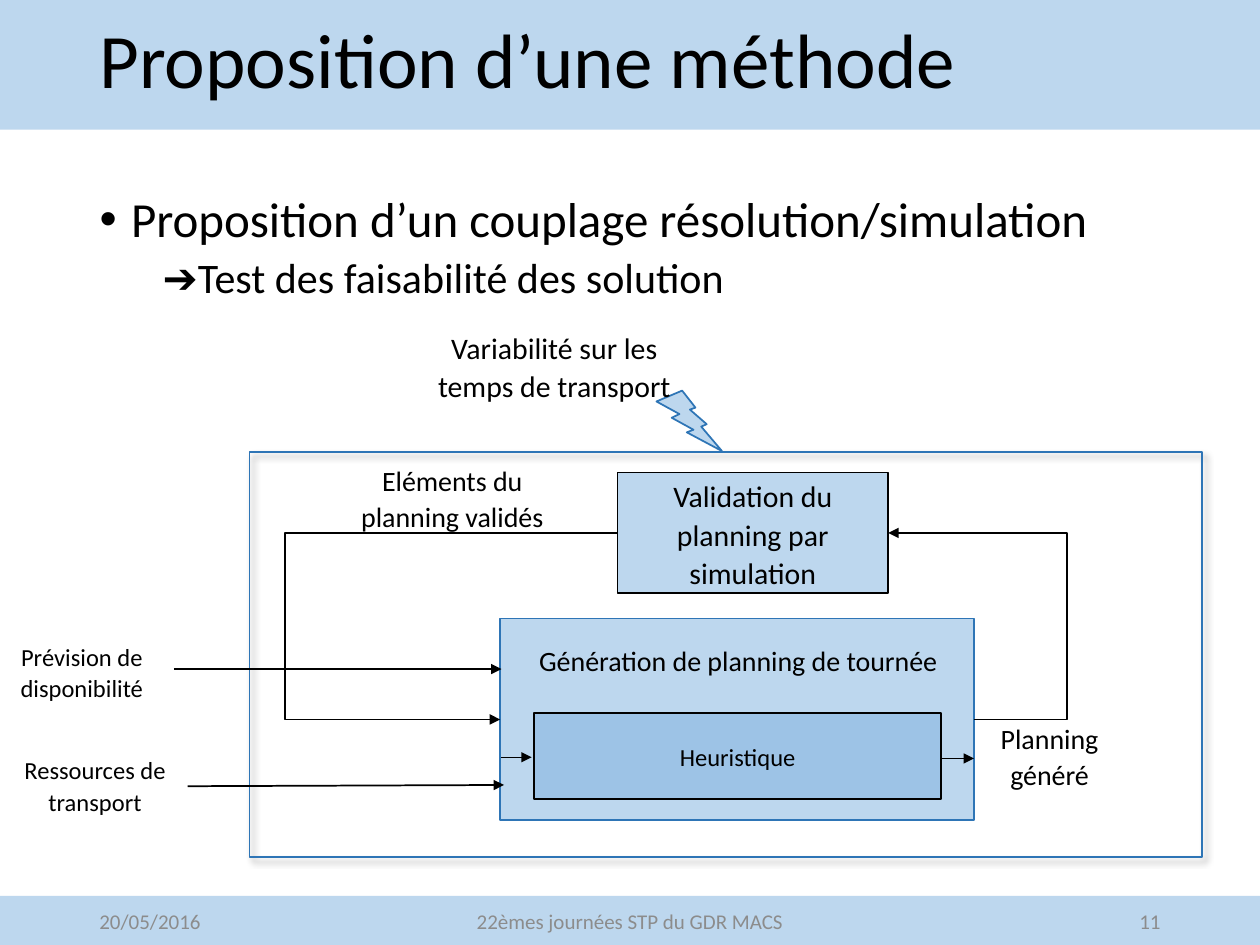
from lxml import etree
from pptx import Presentation
from pptx.dml.color import RGBColor
from pptx.enum.shapes import MSO_CONNECTOR, MSO_SHAPE
from pptx.enum.text import MSO_ANCHOR, MSO_AUTO_SIZE, PP_ALIGN
from pptx.oxml import parse_xml
from pptx.oxml.ns import nsdecls, qn
from pptx.util import Inches, Pt

BLACK = RGBColor(0x00, 0x00, 0x00)
GREY = RGBColor(0x8C, 0x8C, 0x8C)
PALE_BLUE = RGBColor(0xBD, 0xD7, 0xEE)
MID_BLUE = RGBColor(0x9D, 0xC3, 0xE6)
DARK_BLUE = RGBColor(0x2E, 0x75, 0xB6)

RECTANGLE, BOLT = MSO_SHAPE.RECTANGLE, MSO_SHAPE.LIGHTNING_BOLT
STRAIGHT, ELBOW = MSO_CONNECTOR.STRAIGHT, MSO_CONNECTOR.ELBOW
LEFT, CENTER, RIGHT = PP_ALIGN.LEFT, PP_ALIGN.CENTER, PP_ALIGN.RIGHT
TOP, MIDDLE = MSO_ANCHOR.TOP, MSO_ANCHOR.MIDDLE
NO_AUTOFIT = MSO_AUTO_SIZE.NONE


class SlideBuilder:
    font = "Calibri"

    def __init__(self, slide):
        self.slide = slide
        self.shapes = slide.shapes

    def format_paragraph(self, paragraph, size, color=BLACK, align=LEFT, spacing=1.07):
        paragraph.alignment = align
        paragraph.line_spacing = spacing
        for run in paragraph.runs:
            run.font.name = self.font
            run.font.size = Pt(size)
            run.font.color.rgb = color

    def fill_text(self, shape, text, size, anchor=TOP, **style):
        frame = shape.text_frame
        frame.text = text
        frame.word_wrap = True
        frame.auto_size = NO_AUTOFIT
        frame.vertical_anchor = anchor
        for paragraph in frame.paragraphs:
            self.format_paragraph(paragraph, size, **style)

    def placeholder(self, index, left, top, width, height, text, size):
        shape = self.slide.placeholders[index]
        shape.left, shape.top = Inches(left), Inches(top)
        shape.width, shape.height = Inches(width), Inches(height)
        self.fill_text(shape, text, size, MIDDLE, spacing=0.9)
        return shape

    def bullets(self, left, top, width, height, items):
        shape = self.placeholder(1, left, top, width, height,
                                 "\n".join(item[0] for item in items), 28)
        for paragraph, (_, size, before, level, margin, indent, mark) in zip(
                shape.text_frame.paragraphs, items):
            self.format_paragraph(paragraph, size, spacing=0.9)
            paragraph.space_before = Pt(before)
            paragraph.level = level
            properties = paragraph._p.get_or_add_pPr()
            properties.set("marL", str(Inches(margin)))
            properties.set("indent", str(Inches(indent)))
            if mark:
                etree.SubElement(properties, qn("a:buChar"), char=mark)
            else:
                etree.SubElement(properties, qn("a:buNone"))

    def box(self, left, top, width, height, fill=None, line=None, kind=RECTANGLE):
        shape = self.shapes.add_shape(
            kind, Inches(left), Inches(top), Inches(width), Inches(height))
        shape.shadow.inherit = False
        if fill is None:
            shape.fill.background()
        else:
            shape.fill.solid()
            shape.fill.fore_color.rgb = fill
        if line is None:
            shape.line.fill.background()
        else:
            shape.line.color.rgb = line
            shape.line.width = Pt(1)
        return shape

    def drop_shadow(self, shape):
        effects = shape._element.spPr.find(qn("a:effectLst"))
        effects.append(parse_xml(
            f'<a:outerShdw {nsdecls("a")} blurRad="{Pt(4)}" dist="{Pt(3)}" dir="2700000" '
            'algn="tl" rotWithShape="0"><a:srgbClr val="000000">'
            '<a:alpha val="40000"/></a:srgbClr></a:outerShdw>'))

    def label(self, left, top, width, height, text, size, anchor=TOP, **style):
        shape = self.shapes.add_textbox(
            Inches(left), Inches(top), Inches(width), Inches(height))
        self.fill_text(shape, text, size, anchor, **style)

    def arrow(self, start, end, width=1, kind=STRAIGHT):
        connector = self.shapes.add_connector(
            kind, *(Inches(value) for value in (*start, *end)))
        connector.line.color.rgb = BLACK
        connector.line.width = Pt(width)
        etree.SubElement(connector.line._get_or_add_ln(), qn("a:tailEnd"), type="triangle")
        etree.SubElement(connector._element.spPr, qn("a:effectLst"))
        return connector

    def elbow(self, start, end, turn):
        connector = self.arrow(start, end, kind=ELBOW)
        ratio = (turn - start[0]) / (end[0] - start[0])
        guides = connector._element.spPr.find(qn("a:prstGeom")).get_or_add_avLst()
        etree.SubElement(guides, qn("a:gd"), name="adj1", fmla=f"val {round(ratio * 100000)}")


def main():
    presentation = Presentation()
    presentation.slide_width, presentation.slide_height = Inches(10), Inches(7.5)
    slide = presentation.slides.add_slide(presentation.slide_layouts[1])
    builder = SlideBuilder(slide)

    for top, height in ((7.11, 0.4), (0, 1.03)):
        band = builder.box(0, top, 10, height, PALE_BLUE)
        slide.shapes._spTree.insert(2, band._element)

    builder.placeholder(0, 0.69, 0.1, 8.62, 0.81, "Proposition d’une méthode", 44)
    builder.bullets(0.69, 1.31, 8.62, 1.33, [
        ("Proposition d’un couplage résolution/simulation", 28, 10, 0, 0.25, -0.25, "•"),
        ("➔Test des faisabilité des solution", 24, 5, 1, 0.5, 0, None),
    ])
    for left, width, text, align in (
            (0.69, 2.25, "20/05/2016", LEFT),
            (3.31, 3.38, "22èmes journées STP du GDR MACS", CENTER),
            (7.06, 2.25, "11", RIGHT)):
        builder.label(left, 7.11, width, 0.4, text, 12, MIDDLE,
                      color=GREY, align=align, spacing=1.0)

    frame = builder.box(1.98, 3.59, 7.56, 3.21, line=DARK_BLUE)
    builder.drop_shadow(frame)

    builder.shapes = slide.shapes.add_group_shape().shapes
    builder.box(3.97, 4.91, 3.76, 1.6, PALE_BLUE, DARK_BLUE)
    heuristic = builder.box(4.24, 5.66, 3.23, 0.68, MID_BLUE, BLACK)
    builder.fill_text(heuristic, "Heuristique", 14, MIDDLE, align=CENTER)
    builder.label(4.04, 5.04, 3.64, 0.44, "Génération de planning de tournée", 16, align=CENTER)
    builder.arrow((3.98, 6.01), (4.22, 6.01), 0.5)
    builder.arrow((7.48, 6.02), (7.73, 6.02), 0.5)
    builder.shapes = slide.shapes

    builder.box(5.21, 3.1, 0.52, 0.48, PALE_BLUE, DARK_BLUE, BOLT)
    builder.arrow((1.38, 5.31), (3.98, 5.31))
    builder.arrow((1.49, 6.24), (4, 6.23))
    builder.elbow((7.73, 5.71), (7.05, 4.23), 8.47)
    builder.elbow((4.9, 4.23), (3.97, 5.71), 2.26)

    validation = builder.box(4.9, 3.75, 2.15, 0.96, PALE_BLUE, BLACK)
    builder.fill_text(validation, "Validation du planning par simulation", 17,
                      MIDDLE, align=CENTER)

    for left, top, width, height, text, size in (
            (3.3, 2.55, 2.2, 0.62, "Variabilité\u00a0sur les temps de transport", 17),
            (-0.08, 5.03, 1.46, 0.58, "Prévision de disponibilité", 14),
            (0.02, 5.93, 1.47, 0.62, "Ressources de transport", 14),
            (7.59, 5.66, 1.48, 0.74, "Planning généré", 16),
            (2.64, 3.61, 1.9, 0.74, "Eléments du planning validés", 16)):
        builder.label(left, top, width, height, text, size, align=CENTER)

    presentation.save("out.pptx")


if __name__ == "__main__":
    main()
